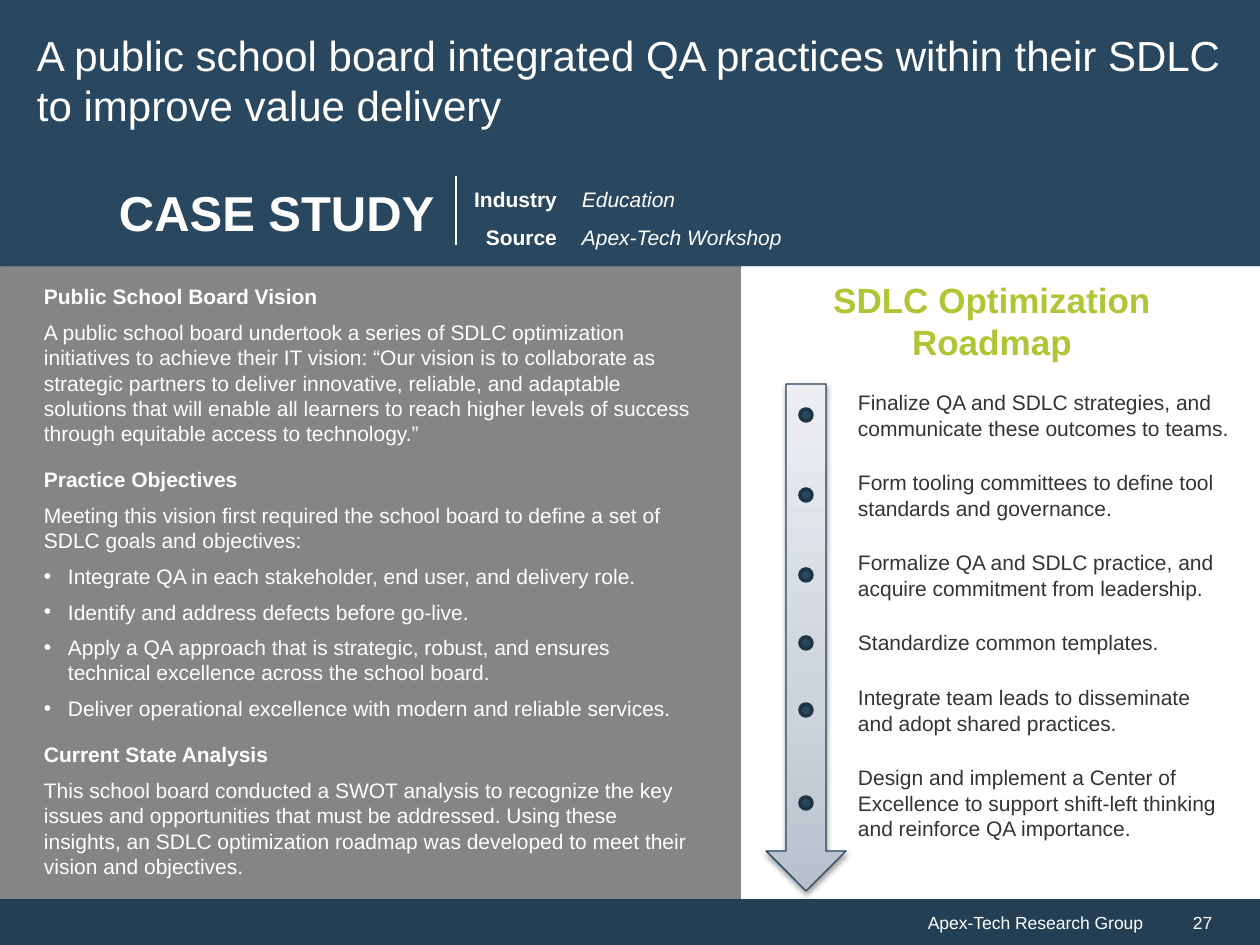
from copy import deepcopy
from dataclasses import dataclass

from lxml.etree import SubElement
from pptx import Presentation
from pptx.dml.color import RGBColor
from pptx.enum.shapes import MSO_CONNECTOR, MSO_SHAPE
from pptx.enum.text import MSO_ANCHOR, PP_ALIGN
from pptx.oxml.ns import qn
from pptx.util import Emu, Pt


@dataclass(frozen=True)
class Theme:
    font: str = "Arial"
    navy: str = "29475F"
    footer: str = "243F54"
    dot_line: str = "1E3546"
    arrow_line: str = "27465E"
    grey: str = "858585"
    lime: str = "B0C534"
    white: str = "FFFFFF"
    ink: str = "333333"
    arrow_stops: tuple = ((0, "B7C0CC"), (0.35, "CDD3DB"), (1, "ECEEF1"))
    small: int = 10
    body: int = 12
    heading: int = 20
    title: int = 24
    banner: int = 28


T = Theme()
PX_PER_INCH = 126
INSETS = (13, 6, 13, 6)

# Left panel: (kind, text)
STORY = [
    ("head", "Public School Board Vision"),
    ("text", "A public school board undertook a series of SDLC optimization initiatives to "
             "achieve their IT vision: “Our vision is to collaborate as strategic partners to "
             "deliver innovative, reliable, and adaptable solutions that will enable all learners "
             "to reach higher levels of success through equitable access to technology.”"),
    ("head", "Practice Objectives"),
    ("text", "Meeting this vision first required the school board to define a set of SDLC goals "
             "and objectives:"),
    ("bullet", "Integrate QA in each stakeholder, end user, and delivery role."),
    ("bullet", "Identify and address defects before go-live."),
    ("bullet", "Apply a QA approach that is strategic, robust, and ensures technical excellence "
               "across the school board."),
    ("bullet", "Deliver operational excellence with modern and reliable services."),
    ("head", "Current State Analysis"),
    ("text", "This school board conducted a SWOT analysis to recognize the key issues and "
             "opportunities that must be addressed. Using these insights, an SDLC optimization "
             "roadmap was developed to meet their vision and objectives."),
]

# Roadmap: (text, number of lines)
STEPS = [
    ("Finalize QA and SDLC strategies, and communicate these outcomes to teams.", 2),
    ("Form tooling committees to define tool standards and governance.", 2),
    ("Formalize QA and SDLC practice, and acquire commitment from leadership.", 2),
    ("Standardize common templates.", 1),
    ("Integrate team leads to disseminate and adopt shared practices.", 2),
    ("Design and implement a Center of Excellence to support shift-left thinking and "
     "reinforce QA importance.", 3),
]


def px(n):
    return Emu(round(n * 914400 / PX_PER_INCH))


def rgb(color):
    return RGBColor.from_string(color)


def add_shape(slide, kind, box, fill=None, line=None, width=1):
    sp = slide.shapes.add_shape(kind, *map(px, box))
    sp.shadow.inherit = False
    if fill:
        sp.fill.solid()
        sp.fill.fore_color.rgb = rgb(fill)
    if line:
        sp.line.color.rgb = rgb(line)
        sp.line.width = Pt(width)
    else:
        sp.line.fill.background()
    return sp


def add_text_box(slide, box):
    return slide.shapes.add_textbox(*map(px, box))


def add_shadow(sp, alpha, blur, dist, angle):
    effects = sp._element.spPr.find(qn("a:effectLst"))
    shadow = SubElement(effects, qn("a:outerShdw"), blurRad=str(Pt(blur)), dist=str(Pt(dist)),
                        dir=str(angle * 60000), algn="ctr", rotWithShape="0")
    color = SubElement(shadow, qn("a:srgbClr"), val="000000")
    SubElement(color, qn("a:alpha"), val=str(alpha * 1000))


def set_gradient(sp, stops, angle):
    sp.fill.gradient()
    sp.fill.gradient_angle = angle
    stop_list = next(sp._element.iter(qn("a:gsLst")))
    while len(stop_list) < len(stops):
        stop_list.append(deepcopy(stop_list[0]))
    for stop, (position, color) in zip(sp.fill.gradient_stops, stops):
        stop.position = position
        stop.color.rgb = rgb(color)


def frame(sp, anchor=MSO_ANCHOR.TOP, insets=INSETS):
    tf = sp.text_frame
    tf.word_wrap = True
    tf.vertical_anchor = anchor
    tf.margin_left, tf.margin_top, tf.margin_right, tf.margin_bottom = map(px, insets)
    return tf


def add_par(tf, text, size=T.body, color=T.white, bold=False, italic=False,
            align=PP_ALIGN.LEFT, before=0, after=0, spacing=1.0, left=0, bullet=False):
    p = tf.paragraphs[0]
    if p.runs:
        p = tf.add_paragraph()
    p.alignment = align
    p.space_before, p.space_after, p.line_spacing = Pt(before), Pt(after), spacing
    pPr = p._p.get_or_add_pPr()
    if left:
        pPr.set("marL", str(px(left)))
    if bullet:
        pPr.set("indent", str(-px(left)))
        SubElement(pPr, qn("a:buFont"), typeface=T.font)
        SubElement(pPr, qn("a:buChar"), char="•")
    r = p.add_run()
    r.text = text
    r.font.name, r.font.size = T.font, Pt(size)
    r.font.bold, r.font.italic = bold, italic
    r.font.color.rgb = rgb(color)


def add_footer(slide):
    owner = add_shape(slide, MSO_SHAPE.RECTANGLE, (0, 899, 1156, 46), T.footer)
    add_par(frame(owner, MSO_ANCHOR.MIDDLE), "Apex-Tech Research Group", T.small,
            align=PP_ALIGN.RIGHT)
    number = add_shape(slide, MSO_SHAPE.RECTANGLE, (1156, 899, 104, 46), T.footer)
    add_par(frame(number, MSO_ANCHOR.MIDDLE), "27", T.small, left=24)


def add_title(slide):
    sp = add_shape(slide, MSO_SHAPE.RECTANGLE, (0, -2, 1260, 164), T.navy)
    add_par(frame(sp, MSO_ANCHOR.MIDDLE, (37, 13, 37, 13)),
            "A public school board integrated QA practices within their SDLC to improve "
            "value delivery", T.title, after=8)


def add_story(slide):
    add_shape(slide, MSO_SHAPE.RECTANGLE, (0, 260, 741, 639), T.grey)
    tf = frame(add_text_box(slide, (31, 278, 681, 612)))
    for i, (kind, text) in enumerate(STORY):
        head, bullet = kind == "head", kind == "bullet"
        add_par(tf, text, bold=head, before=6 if head and i else 0, after=6,
                left=24 if bullet else 0, bullet=bullet)


def add_banner(slide):
    sp = add_shape(slide, MSO_SHAPE.RECTANGLE, (0, 157, 1260, 109), T.navy)
    add_shadow(sp, 14, 0, 1, 45)
    add_par(frame(sp, MSO_ANCHOR.MIDDLE, (95, 6, 13, 6)), "CASE STUDY", T.banner,
            bold=True, left=24)
    # Labels, divider and values
    labels = frame(add_text_box(slide, (450, 168, 120, 84)))
    for text in ("Industry", "Source"):
        add_par(labels, text, bold=True, align=PP_ALIGN.RIGHT, spacing=1.5)
    line = slide.shapes.add_connector(MSO_CONNECTOR.STRAIGHT, px(456), px(176), px(456), px(245))
    line.line.color.rgb = rgb(T.white)
    line.line.width = Pt(0.75)
    SubElement(line._element.spPr, qn("a:effectLst"))
    values = frame(add_text_box(slide, (569, 168, 515, 89)))
    for text in ("Education", "Apex-Tech Workshop"):
        add_par(values, text, italic=True, spacing=1.5)


def add_roadmap(slide):
    heading = frame(add_text_box(slide, (740, 272, 504, 97)))
    add_par(heading, "SDLC Optimization Roadmap", T.heading, T.lime, bold=True,
            align=PP_ALIGN.CENTER)
    arrow = add_shape(slide, MSO_SHAPE.DOWN_ARROW, (766, 384, 80, 507),
                      line=T.arrow_line, width=0.75)
    set_gradient(arrow, T.arrow_stops, 90)
    add_shadow(arrow, 38, 3.1, 1.6, 90)
    # Each step has a dot level with its middle
    top, line_height, gap, dot = 384, 25, 17, 12
    for text, lines in STEPS:
        height = lines * line_height + 13
        add_par(frame(add_text_box(slide, (845, top, 398, height))), text, color=T.ink)
        add_shape(slide, MSO_SHAPE.OVAL, (800, top + (height - dot) // 2, dot, dot),
                  T.navy, T.dot_line, 2)
        top += height + gap


def main():
    prs = Presentation()
    prs.slide_width, prs.slide_height = px(1260), px(945)
    slide = prs.slides.add_slide(prs.slide_layouts[6])
    add_footer(slide)
    add_title(slide)
    add_story(slide)
    add_banner(slide)
    add_roadmap(slide)
    prs.save("out.pptx")


if __name__ == "__main__":
    main()
